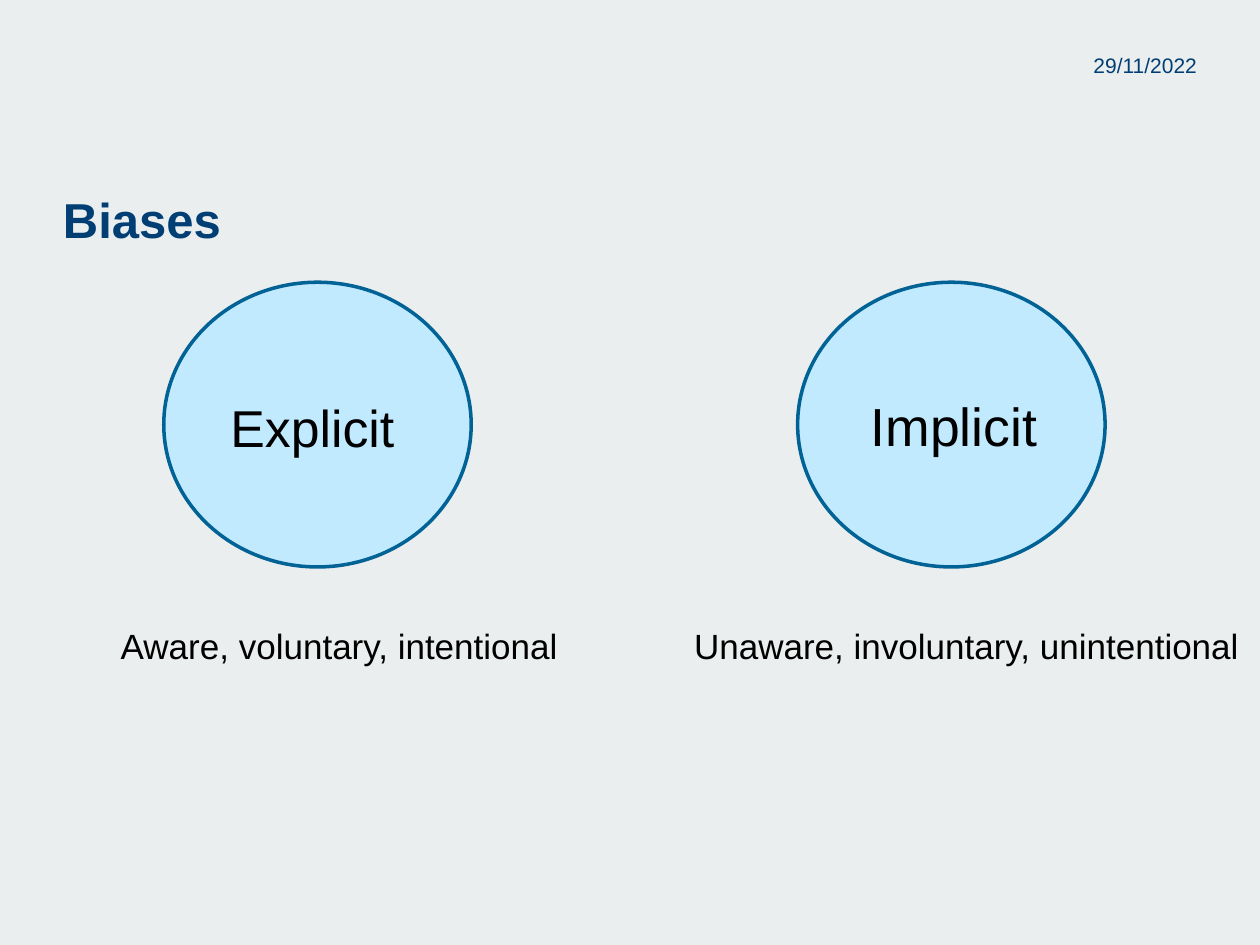
"""Build the slide that contrasts explicit and implicit biases."""
from dataclasses import dataclass

from pptx import Presentation
from pptx.dml.color import RGBColor
from pptx.enum.shapes import MSO_SHAPE
from pptx.enum.text import MSO_ANCHOR, PP_ALIGN
from pptx.slide import Slide
from pptx.util import Pt

OVAL = MSO_SHAPE.OVAL
TOP, MIDDLE = MSO_ANCHOR.TOP, MSO_ANCHOR.MIDDLE
LEFT, RIGHT = PP_ALIGN.LEFT, PP_ALIGN.RIGHT
FONT = "Arial"
BACKGROUND, NAVY, BLACK = "EBEEEE", "003E74", "000000"
CIRCLE_FILL, CIRCLE_LINE = "C1EAFF", "006295"
CIRCLE_TOP, CIRCLE_WIDTH, CIRCLE_HEIGHT = 161.3, 175.7, 162.7


@dataclass(frozen=True)
class Label:
    """One line of text with its box, in points."""

    text: str
    left: float
    top: float
    width: float
    height: float
    size: float
    color: str = BLACK
    bold: bool = False
    align: PP_ALIGN = LEFT
    anchor: MSO_ANCHOR = TOP
    insets: tuple[float, float, float, float] = (7.2, 3.6, 7.2, 3.6)
    line_spacing: float = 1.0


@dataclass(frozen=True)
class Bias:
    """A kind of bias: its circle, name and caption."""

    circle_left: float
    name: Label
    caption: Label


HEADINGS = (
    Label("Biases", 36, 103, 648, 40.3, 28, NAVY, bold=True,
          anchor=MIDDLE, insets=(0, 3.6, 0, 0)),
    Label("29/11/2022", 558.7, 28.8, 125.3, 25.9, 12, NAVY,
          align=RIGHT, insets=(0, 1, 0, 0)),
)
BIASES = (
    Bias(93.6,
         Label("Explicit", 124.6, 219.6, 113, 51.1, 29.6,
               insets=(7.2, 6.6, 7.2, 3.6)),
         Label("Aware, voluntary, intentional", 61.9, 353.5, 269.3, 31.7, 20)),
    Bias(455.8,
         Label("Implicit", 486.7, 225.4, 113, 51.1, 30.6,
               insets=(10.8, 6, 3.6, 3.6), line_spacing=0.8),
         Label("Unaware, involuntary, unintentional", 389.5, 353.5, 421.2, 31.7, 20)),
)


def rgb(color: str) -> RGBColor:
    """Turn a hex string into a colour."""
    return RGBColor.from_string(color)


def draw_label(slide: Slide, label: Label) -> None:
    """Draw one text label."""
    box = slide.shapes.add_textbox(
        Pt(label.left), Pt(label.top), Pt(label.width), Pt(label.height))
    frame = box.text_frame
    frame.word_wrap = True
    frame.vertical_anchor = label.anchor
    left, top, right, bottom = map(Pt, label.insets)
    frame.margin_left, frame.margin_top = left, top
    frame.margin_right, frame.margin_bottom = right, bottom
    paragraph = frame.paragraphs[0]
    paragraph.alignment = label.align
    paragraph.line_spacing = label.line_spacing
    run = paragraph.add_run()
    run.text = label.text
    run.font.name = FONT
    run.font.size = Pt(label.size)
    run.font.bold = label.bold
    run.font.color.rgb = rgb(label.color)


def draw_bias(slide: Slide, bias: Bias) -> None:
    """Draw the circle, name and caption of one bias."""
    circle = slide.shapes.add_shape(
        OVAL, Pt(bias.circle_left), Pt(CIRCLE_TOP), Pt(CIRCLE_WIDTH), Pt(CIRCLE_HEIGHT))
    circle.shadow.inherit = False
    circle.fill.solid()
    circle.fill.fore_color.rgb = rgb(CIRCLE_FILL)
    circle.line.color.rgb = rgb(CIRCLE_LINE)
    circle.line.width = Pt(2)
    draw_label(slide, bias.name)
    draw_label(slide, bias.caption)


def main() -> None:
    """Build and save the presentation."""
    presentation = Presentation()
    presentation.slide_width, presentation.slide_height = Pt(720), Pt(540)
    slide = presentation.slides.add_slide(presentation.slide_layouts[6])
    slide.background.fill.solid()
    slide.background.fill.fore_color.rgb = rgb(BACKGROUND)
    for heading in HEADINGS:
        draw_label(slide, heading)
    for bias in BIASES:
        draw_bias(slide, bias)
    presentation.save("out.pptx")


if __name__ == "__main__":
    main()
